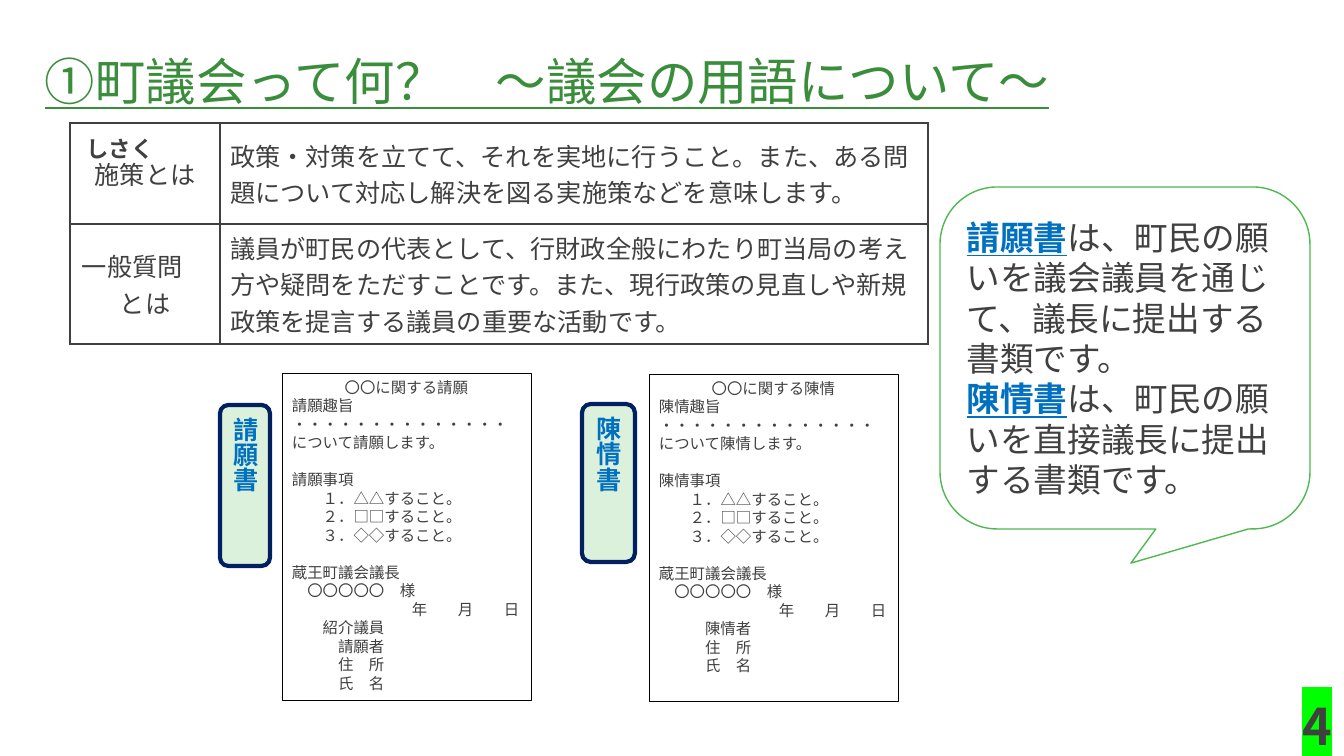
from lxml import etree
from pptx import Presentation
from pptx.dml.color import RGBColor
from pptx.enum.shapes import MSO_SHAPE
from pptx.enum.text import MSO_ANCHOR, PP_ALIGN
from pptx.oxml.ns import qn
from pptx.util import Emu, Pt

RECT = MSO_SHAPE.RECTANGLE
ROUNDED = MSO_SHAPE.ROUNDED_RECTANGLE
CALLOUT = MSO_SHAPE.ROUNDED_RECTANGULAR_CALLOUT
TOP, MIDDLE = MSO_ANCHOR.TOP, MSO_ANCHOR.MIDDLE
LEFT, CENTER, RIGHT = PP_ALIGN.LEFT, PP_ALIGN.CENTER, PP_ALIGN.RIGHT

PX_PER_INCH = 100.8
JAPANESE = "Noto Sans CJK JP"
GRAY, BLUE, WHITE = "404040", "0070C0", "FFFFFF"

# Each form line: text, indent in characters, blank line above
FORM_ITEMS = [("１．△△すること。", 2, False),
              ("２．□□すること。", 2, False),
              ("３．◇◇すること。", 2, False),
              ("蔵王町議会議長", 0, True),
              ("〇〇〇〇〇　様", 1, False),
              ("\t年\t月\t日", 0, False)]
ADDRESS = [("住　所", 3, False), ("氏　名", 3, False)]

TERMS = [
    ("施策とは",
     "政策・対策を立てて、それを実地に行うこと。また、ある問題について対応し"
     "解決を図る実施策などを意味します。"),
    ("一般質問　とは",
     "議員が町民の代表として、行財政全般にわたり町当局の考え方や疑問をただすことです。"
     "また、現行政策の見直しや新規政策を提言する議員の重要な活動です。"),
]


def px(length):
    return Emu(round(length * 914400 / PX_PER_INCH))


def color(value):
    return RGBColor.from_string(value)


def write(para, text, size=18, font="Arial", fill=GRAY, bold=False,
          underline=False, highlight=None, align=LEFT):
    para.alignment = align
    span = para.add_run()
    span.text = text
    span.font.size = Pt(size)
    span.font.bold = bold
    span.font.underline = underline
    span.font.color.rgb = color(fill)
    span.font.name = font
    properties = span.font._element
    etree.SubElement(properties, qn("a:ea"), typeface=JAPANESE)
    if highlight:
        mark = etree.Element(qn("a:highlight"))
        etree.SubElement(mark, qn("a:srgbClr"), val=highlight)
        properties.find(qn("a:solidFill")).addnext(mark)


def add_panel(page, kind, box, fill, line, width, anchor):
    panel = page.shapes.add_shape(kind, *map(px, box))
    panel.shadow.inherit = False
    panel.fill.solid()
    panel.fill.fore_color.rgb = color(fill)
    panel.line.color.rgb = color(line)
    panel.line.width = Pt(width)
    panel.text_frame.word_wrap = True
    panel.text_frame.vertical_anchor = anchor
    return panel


def add_label(page, box, text, anchor=MIDDLE, spacing=1.0, **style):
    frame = page.shapes.add_textbox(*map(px, box)).text_frame
    frame.word_wrap = True
    frame.vertical_anchor = anchor
    para = frame.paragraphs[0]
    para.line_spacing = spacing
    write(para, text, **style)


def add_form(page, box, word, signers):
    """Sample letter with centred heading, request list and signature block."""
    size = 11
    frame = add_panel(page, RECT, box, WHITE, "000000", 0.25, TOP).text_frame
    lines = [(f"〇〇に関する{word}", 0, False),
             (f"{word}趣旨", 0, False),
             ("・" * 14 + f"について{word}します。", 0, False),
             (f"{word}事項", 0, True)]
    lines += FORM_ITEMS + signers + ADDRESS
    for index, (text, indent, gap) in enumerate(lines):
        para = frame.add_paragraph() if index else frame.paragraphs[0]
        para.line_spacing = Pt(size * 1.2)
        if gap:
            para.space_before = Pt(size * 1.2)
        properties = para._p.get_or_add_pPr()
        properties.set("marL", str(Pt(size * indent)))
        if "\t" in text:
            tabs = etree.SubElement(properties, qn("a:tabLst"))
            for stop in (120, 166, 212):
                etree.SubElement(tabs, qn("a:tab"), pos=str(px(stop)), algn="l")
        write(para, text, size=size, font=JAPANESE,
              align=LEFT if index else CENTER)


def add_vertical_tag(page, box, text):
    frame = add_panel(page, ROUNDED, box, "DCF1DC", "002060", 3, MIDDLE).text_frame
    frame._txBody.bodyPr.set("vert", "eaVert")
    frame.margin_top = px(10)
    write(frame.paragraphs[0], text, fill=BLUE, bold=True)


def add_callout(page, box, entries):
    callout = add_panel(page, CALLOUT, box, WHITE, "50B852", 1, MIDDLE)
    for index, value in enumerate((0.016, 0.6, 0.167)):
        callout.adjustments[index] = value
    frame = callout.text_frame
    for index, (term, meaning) in enumerate(entries):
        para = frame.add_paragraph() if index else frame.paragraphs[0]
        para.line_spacing = Pt(28.8)
        write(para, term, size=24, fill=BLUE, bold=True, underline=True)
        write(para, meaning, size=24)


def add_borders(cell):
    properties = cell._tc.get_or_add_tcPr()
    for index, side in enumerate(("lnL", "lnR", "lnT", "lnB")):
        line = etree.Element(qn(f"a:{side}"), w=str(Pt(1)))
        fill = etree.SubElement(line, qn("a:solidFill"))
        etree.SubElement(fill, qn("a:srgbClr"), val=GRAY)
        properties.insert(index, line)


def add_term_table(page, box, widths, heights):
    table = page.shapes.add_table(len(heights), len(widths), *map(px, box)).table
    table.first_row = table.horz_banding = False
    for column, width in zip(table.columns, widths):
        column.width = px(width)
    for row, height, texts in zip(table.rows, heights, TERMS):
        row.height = px(height)
        for cell, text, align in zip(row.cells, texts, (CENTER, LEFT)):
            cell.fill.solid()
            cell.fill.fore_color.rgb = color(WHITE)
            cell.vertical_anchor = MIDDLE
            add_borders(cell)
            write(cell.text_frame.paragraphs[0], text, align=align)


def add_terms_page(deck):
    page = deck.slides.add_slide(deck.slide_layouts[6])
    add_form(page, (649, 374, 249, 327), "陳情", [("陳情者", 3, False)])
    add_form(page, (282, 373, 249, 327), "請願",
             [("紹介議員", 2, False), ("請願者", 3, False)])
    add_vertical_tag(page, (220, 405, 50, 161), "請願書")
    add_vertical_tag(page, (582, 404, 53, 158), "陳情書")
    add_callout(page, (940, 187, 370, 342), [
        ("請願書", "は、町民の願いを議会議員を通じて、議長に提出する書類です。"),
        ("陳情書", "は、町民の願いを直接議長に提出する書類です。")])
    add_term_table(page, (70, 123, 858, 221), (150, 708), (101, 120))
    add_label(page, (35, 52, 1135, 72), "①町議会って何？　～議会の用語について～",
              anchor=TOP, spacing=0.9, size=36, font=JAPANESE, fill="398D3B",
              underline=True)
    add_label(page, (69, 134, 102, 30), "しさく", size=16, bold=True, align=CENTER)
    add_label(page, (1250, 705, 92, 40), "4", size=36, font=JAPANESE, bold=True,
              highlight="00FF00", align=RIGHT)


def main():
    deck = Presentation()
    deck.slide_width, deck.slide_height = px(1344), px(756)
    add_terms_page(deck)
    deck.save("out.pptx")


if __name__ == "__main__":
    main()
